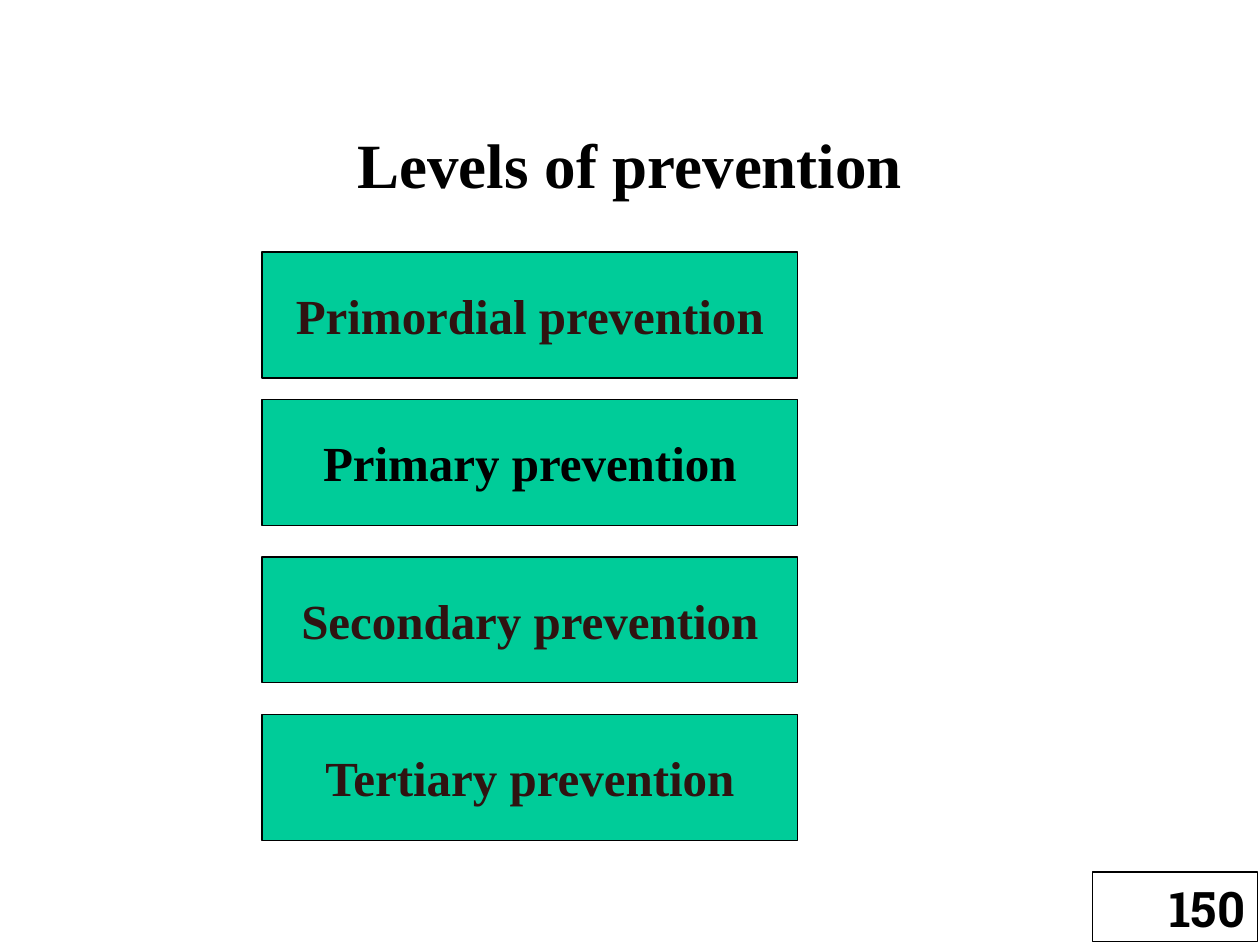
from pptx import Presentation
from pptx.dml.color import RGBColor
from pptx.enum.shapes import MSO_SHAPE as Shape
from pptx.enum.text import MSO_ANCHOR as Anchor, PP_ALIGN as Align
from pptx.util import Inches, Pt

BLACK = RGBColor(0x00, 0x00, 0x00)
BROWN = RGBColor(0x2F, 0x13, 0x11)
GREEN = RGBColor(0x00, 0xCC, 0x99)

SERIF = "Times New Roman"
SLAB = "Roboto Slab"

TITLE = "Levels of prevention"
PAGE_NUMBER = "150"
LEVELS = [
    ("Primordial prevention", 2, BROWN),
    ("Primary prevention", 3.17, BLACK),
    ("Secondary prevention", 4.42, BROWN),
    ("Tertiary prevention", 5.67, BROWN),
]
LEVEL_LEFT, LEVEL_WIDTH, LEVEL_HEIGHT = 2.08, 4.25, 1


def write(holder, text, align, anchor, wrap, color, **font_format):
    """Put one bold formatted paragraph into a shape."""
    frame = holder.text_frame
    frame.text = text
    frame.word_wrap = wrap
    frame.vertical_anchor = anchor
    paragraph = frame.paragraphs[0]
    paragraph.alignment = align
    font = paragraph.runs[0].font
    font.color.rgb = color
    for attribute, value in {"bold": True, **font_format}.items():
        setattr(font, attribute, value)


def add_box(slide, place, fill=None):
    """Add a thinly outlined rectangle, filled if a colour is given."""
    box = slide.shapes.add_shape(Shape.RECTANGLE, *map(Inches, place))
    box.shadow.inherit = False
    box.line.color.rgb = BLACK
    box.line.width = Pt(0.75)
    if fill is None:
        box.fill.background()
    else:
        box.fill.solid()
        box.fill.fore_color.rgb = fill
    return box


def main():
    """Build the slide on levels of prevention."""
    deck = Presentation()
    deck.slide_width, deck.slide_height = Inches(10), Inches(7.5)
    slide = deck.slides.add_slide(deck.slide_layouts[5])

    title = slide.shapes.title
    title_place = {"left": 0.75, "top": 0.67, "width": 8.5, "height": 1.25}
    for side, length in title_place.items():
        setattr(title, side, Inches(length))
    write(title, TITLE, Align.CENTER, Anchor.MIDDLE, True, BLACK,
          name=SERIF, size=Pt(36))

    for level, top, color in LEVELS:
        level_box = add_box(slide, (LEVEL_LEFT, top, LEVEL_WIDTH, LEVEL_HEIGHT), GREEN)
        write(level_box, level, Align.CENTER, Anchor.MIDDLE, False, color,
              name=SERIF, size=Pt(28))

    number_box = add_box(slide, (8.67, 6.92, 1.31, 0.55))
    write(number_box, PAGE_NUMBER, Align.RIGHT, Anchor.TOP, True, BLACK,
          name=SLAB, size=Pt(28))

    deck.save("out.pptx")


if __name__ == "__main__":
    main()
